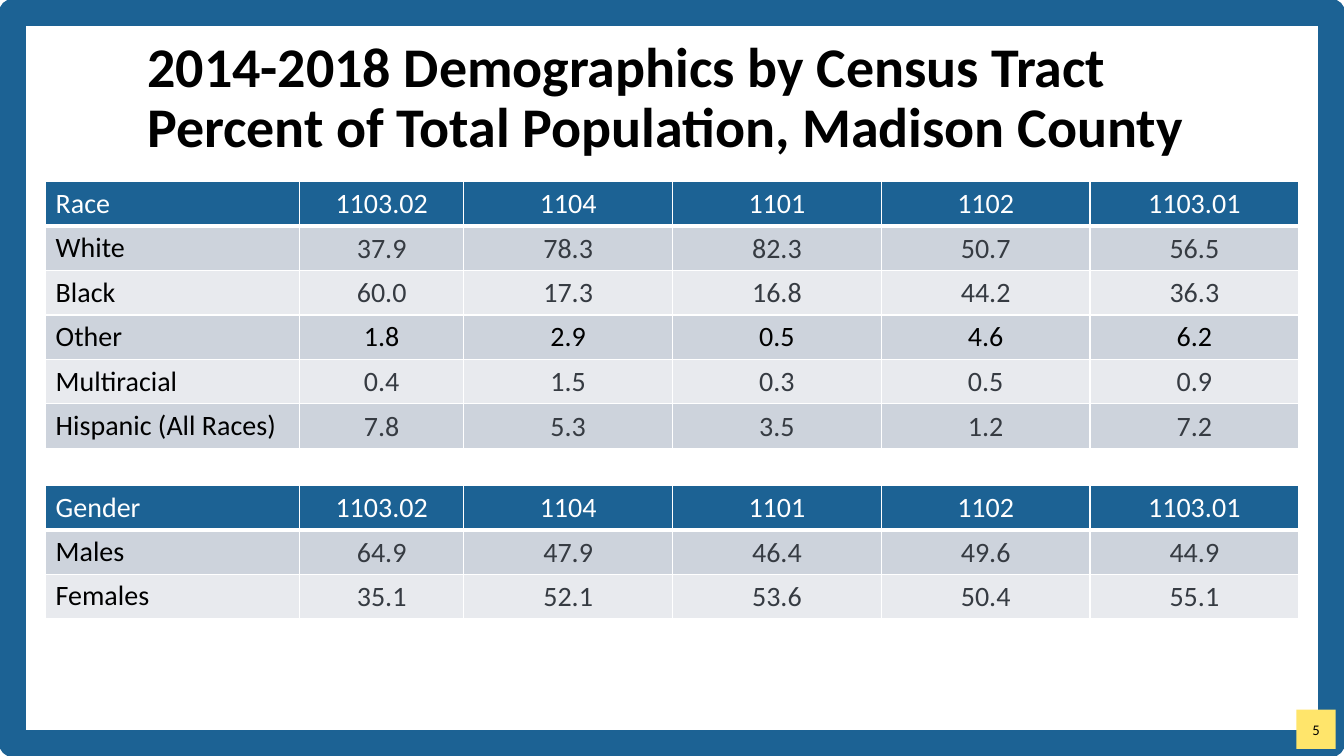
from lxml import etree
from pptx import Presentation, util as u
from pptx.dml.color import RGBColor
from pptx.enum import shapes, text
from pptx.oxml import ns

BLUE = RGBColor(0x1C, 0x62, 0x94)
YELLOW = RGBColor(0xFF, 0xE5, 0x6B)
WHITE = RGBColor(0xFF, 0xFF, 0xFF)
BLACK = RGBColor(0, 0, 0)
SLATE = RGBColor(0x36, 0x3B, 0x42)
BANDS = (RGBColor(0xCD, 0xD3, 0xDC), RGBColor(0xE8, 0xEA, 0xEE))

TRACTS = ("1103.02", "1104", "1101", "1102", "1103.01")
RACE = {
    "White": ("37.9", "78.3", "82.3", "50.7", "56.5"),
    "Black": ("60.0", "17.3", "16.8", "44.2", "36.3"),
    "Other": ("1.8", "2.9", "0.5", "4.6", "6.2"),
    "Multiracial": ("0.4", "1.5", "0.3", "0.5", "0.9"),
    "Hispanic (All Races)": ("7.8", "5.3", "3.5", "1.2", "7.2"),
}
GENDER = {
    "Males": ("64.9", "47.9", "46.4", "49.6", "44.9"),
    "Females": ("35.1", "52.1", "53.6", "50.4", "55.1"),
}
COLUMN_WIDTHS = (6.4, 4.14, 5.26, 5.26, 5.26, 5.26)
ROW_HEIGHT = 1.1


def write(frame, words, size=20, color=BLACK, bold=False, align=text.PP_ALIGN.LEFT,
          line_spacing=None):
    paragraph = frame.paragraphs[0]
    paragraph.text = words
    paragraph.alignment = align
    paragraph.line_spacing = line_spacing
    for run in paragraph.runs:
        run.font.name = "Calibri"
        run.font.size = u.Pt(size)
        run.font.bold = bold
        run.font.color.rgb = color


def add_border(slide, left, top, width, height):
    border = slide.shapes.add_shape(shapes.MSO_SHAPE.RECTANGLE, u.Cm(left), u.Cm(top),
                                    u.Cm(width), u.Cm(height))
    border.shadow.inherit = False
    border.fill.background()
    border.line.color.rgb = BLUE
    border.line.width = u.Pt(19)


def add_page_number(slide, number, left, top, side):
    badge = slide.shapes.add_shape(shapes.MSO_SHAPE.RECTANGLE, u.Cm(left), u.Cm(top),
                                   u.Cm(side), u.Cm(side))
    badge.shadow.inherit = False
    badge.fill.solid()
    badge.fill.fore_color.rgb = YELLOW
    badge.line.fill.background()
    frame = badge.text_frame
    frame.margin_left = frame.margin_right = 0
    frame.vertical_anchor = text.MSO_ANCHOR.MIDDLE
    write(frame, number, size=10.5, align=text.PP_ALIGN.CENTER)


def place_title(slide, words, left, top, width, height):
    title = slide.shapes.title
    title.left, title.top = u.Cm(left), u.Cm(top)
    title.width, title.height = u.Cm(width), u.Cm(height)
    frame = title.text_frame
    frame.auto_size = text.MSO_AUTO_SIZE.NONE
    frame.vertical_anchor = text.MSO_ANCHOR.MIDDLE
    write(frame, words, size=40, bold=True, line_spacing=0.9)


def outline_cell(cell, bottom):
    """Draw white edges, with the bottom edge's width given in points."""
    properties = cell._tc.get_or_add_tcPr()
    for edge, points in (("L", 1), ("R", 1), ("T", 1), ("B", bottom)):
        line = etree.SubElement(properties, ns.qn(f"a:ln{edge}"), w=str(u.Pt(points)))
        fill = etree.SubElement(line, ns.qn("a:solidFill"))
        etree.SubElement(fill, ns.qn("a:srgbClr"), val=str(WHITE))


def format_value_cell(cell):
    cell.vertical_anchor = text.MSO_ANCHOR.MIDDLE
    cell.margin_left = cell.margin_right = cell.margin_top = u.Cm(0.03)
    cell.margin_bottom = 0


def add_demographics(slide, heading, groups, left, top):
    rows = [(heading, *TRACTS)] + [(group, *shares) for group, shares in groups.items()]
    table = slide.shapes.add_table(
        len(rows), len(COLUMN_WIDTHS), u.Cm(left), u.Cm(top),
        u.Cm(sum(COLUMN_WIDTHS)), u.Cm(ROW_HEIGHT * len(rows))).table
    for column, width in zip(table.columns, COLUMN_WIDTHS):
        column.width = u.Cm(width)
    for r, row in enumerate(rows):
        table.rows[r].height = u.Cm(ROW_HEIGHT)
        for c, words in enumerate(row):
            cell = table.cell(r, c)
            is_header = r == 0
            is_slate = not is_header and c > 0 and row[0] != "Other"
            if is_slate:
                format_value_cell(cell)
            outline_cell(cell, bottom=3 if is_header else 1)
            cell.fill.solid()
            cell.fill.fore_color.rgb = BLUE if is_header else BANDS[(r - 1) % 2]
            write(cell.text_frame, words,
                  color=WHITE if is_header else SLATE if is_slate else BLACK,
                  align=text.PP_ALIGN.CENTER if c else text.PP_ALIGN.LEFT)


def main():
    deck = Presentation()
    deck.slide_width, deck.slide_height = u.Cm(33.87), u.Cm(19.05)
    slide = deck.slides.add_slide(deck.slide_layouts[5])
    add_border(slide, 0.31, 0.31, 33.25, 18.42)
    add_page_number(slide, "5", 32.67, 17.88, 0.99)
    place_title(slide, "2014-2018 Demographics by Census Tract\v"
                "Percent of Total Population, Madison County", 3.46, 1.17, 29.2, 2.67)
    add_demographics(slide, "Race", RACE, 1.15, 4.58)
    add_demographics(slide, "Gender", GENDER, 1.15, 12.23)
    deck.save("out.pptx")


if __name__ == "__main__":
    main()
